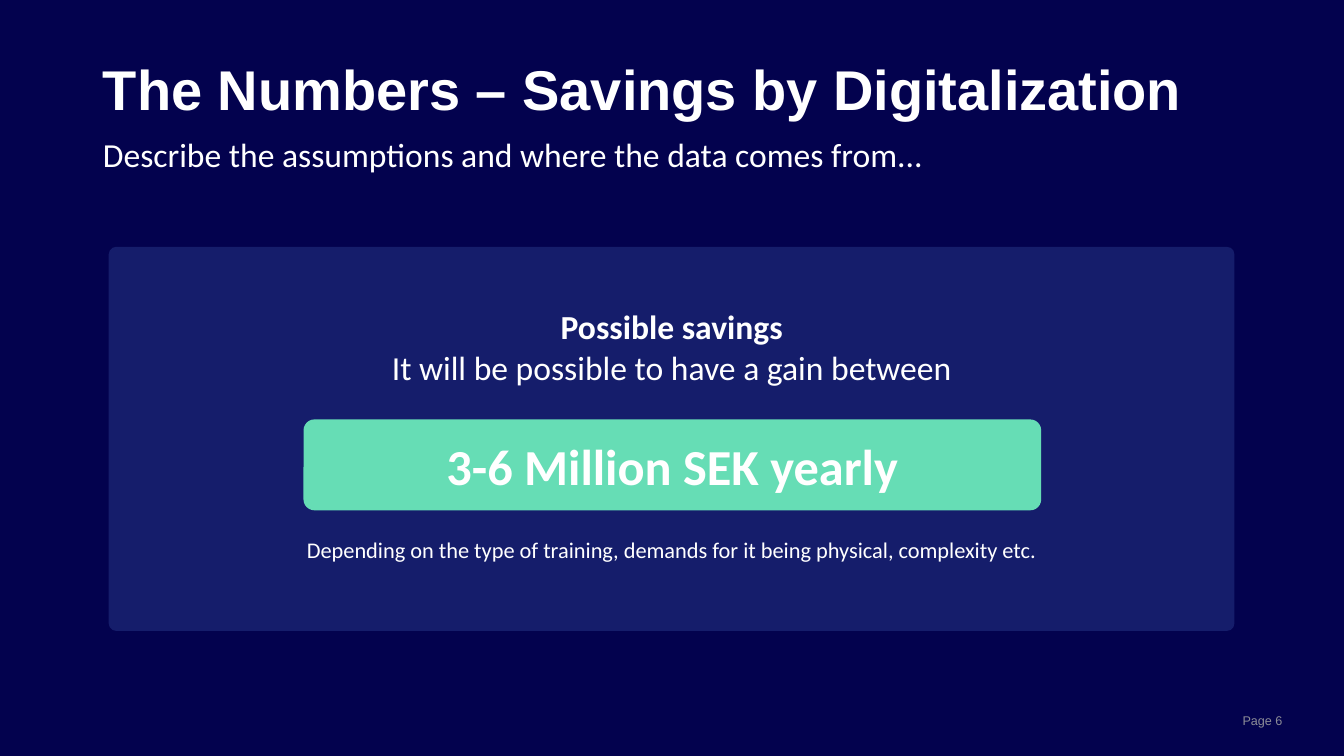
from lxml import etree
from pptx import Presentation
from pptx.dml.color import RGBColor
from pptx.enum.shapes import MSO_SHAPE
from pptx.enum.text import MSO_ANCHOR, MSO_AUTO_SIZE, PP_ALIGN
from pptx.oxml.ns import qn
from pptx.util import Cm, Pt

ROUNDED = MSO_SHAPE.ROUNDED_RECTANGLE
TOP, MIDDLE, BOTTOM = MSO_ANCHOR.TOP, MSO_ANCHOR.MIDDLE, MSO_ANCHOR.BOTTOM
LEFT, CENTER, RIGHT = PP_ALIGN.LEFT, PP_ALIGN.CENTER, PP_ALIGN.RIGHT
NO_AUTOFIT = MSO_AUTO_SIZE.NONE

COLORS = {
    "background": "03024E",
    "panel": "73A6FF",
    "badge": "66DDB5",
    "text": "FFFFFF",
    "page": "8C8C97",
}
HEADING_FONT, BODY_FONT = "Arial", "Calibri"


class SlideBuilder:
    """Holds the style and the current slide."""

    def __init__(self, presentation):
        self.slide = presentation.slides.add_slide(presentation.slide_layouts[1])
        self.paint(self.slide.background.fill, "background")

    def paint(self, fill, color):
        fill.solid()
        fill.fore_color.rgb = RGBColor.from_string(COLORS[color])

    def place(self, shape, left, top, width, height):
        shape.left, shape.top = Cm(left), Cm(top)
        shape.width, shape.height = Cm(width), Cm(height)

    def frame(self, shape, anchor):
        text_frame = shape.text_frame
        text_frame.word_wrap = True
        text_frame.auto_size = NO_AUTOFIT
        text_frame.vertical_anchor = anchor
        return text_frame

    def set_text(self, paragraph, text, size, bold=False, align=LEFT,
                 font=BODY_FONT, color="text", before=0, spacing=1.0):
        paragraph.text = text
        paragraph.alignment = align
        paragraph.space_before = Pt(before)
        paragraph.line_spacing = spacing
        paragraph.font.name = font
        paragraph.font.size = Pt(size)
        paragraph.font.bold = bold
        paragraph.font.color.rgb = RGBColor.from_string(COLORS[color])

    def title(self, text, *box):
        shape = self.slide.shapes.title
        self.place(shape, *box)
        paragraph = self.frame(shape, BOTTOM).paragraphs[0]
        self.set_text(paragraph, text, 40, bold=True, font=HEADING_FONT, spacing=0.9)

    def subtitle(self, text, *box):
        shape = self.slide.placeholders[1]
        self.place(shape, *box)
        paragraph = self.frame(shape, TOP).paragraphs[0]
        properties = paragraph._p.get_or_add_pPr()
        properties.set("marL", "0")
        properties.set("indent", "0")
        etree.SubElement(properties, qn("a:buNone"))
        self.set_text(paragraph, text, 24, spacing=0.9)

    def text_box(self, lines, *box, anchor=TOP):
        shape = self.slide.shapes.add_textbox(*map(Cm, box))
        text_frame = self.frame(shape, anchor)
        for index, line in enumerate(lines):
            paragraph = text_frame.add_paragraph() if index else text_frame.paragraphs[0]
            self.set_text(paragraph, **line)

    def rounded_box(self, color, radius, *box, opacity=100):
        shape = self.slide.shapes.add_shape(ROUNDED, *map(Cm, box))
        shape.adjustments[0] = radius
        shape.shadow.inherit = False
        shape.line.fill.background()
        self.paint(shape.fill, color)
        if opacity < 100:
            rgb = shape._element.spPr.find(qn("a:solidFill")).find(qn("a:srgbClr"))
            etree.SubElement(rgb, qn("a:alpha")).set("val", str(opacity * 1000))
        return shape

    def badge(self, text, *box):
        shape = self.rounded_box("badge", 0.12, *box)
        paragraph = self.frame(shape, MIDDLE).paragraphs[0]
        self.set_text(paragraph, text, 36, bold=True, align=CENTER)


def main():
    presentation = Presentation()
    presentation.slide_width, presentation.slide_height = Cm(33.87), Cm(19.05)
    builder = SlideBuilder(presentation)

    # Heading
    builder.title("The Numbers – Savings by Digitalization", 2.34, 1.3, 29.21, 1.93)
    builder.subtitle("Describe the assumptions and where the data comes from...",
                     2.34, 3.35, 29.21, 1.02)

    # Savings panel, with room for the badge above the last line
    builder.rounded_box("panel", 0.02, 2.74, 6.22, 28.37, 9.68, opacity=17)
    builder.text_box([
        dict(text="Possible savings", size=24, bold=True, align=CENTER),
        dict(text="It will be possible to have a gain between", size=24, align=CENTER),
        dict(text="Depending on the type of training, demands for it being physical, "
                  "complexity etc.", size=16, align=CENTER, before=107),
    ], 6.45, 7.59, 20.96, 9.14)
    builder.badge("3-6 Million SEK yearly", 7.65, 10.57, 18.59, 2.29)

    # Page number
    builder.text_box([dict(text="Page 6", size=9, align=RIGHT, font=HEADING_FONT,
                           color="page")], 29.57, 17.65, 3, 1.02, anchor=MIDDLE)

    presentation.save("out.pptx")


if __name__ == "__main__":
    main()
